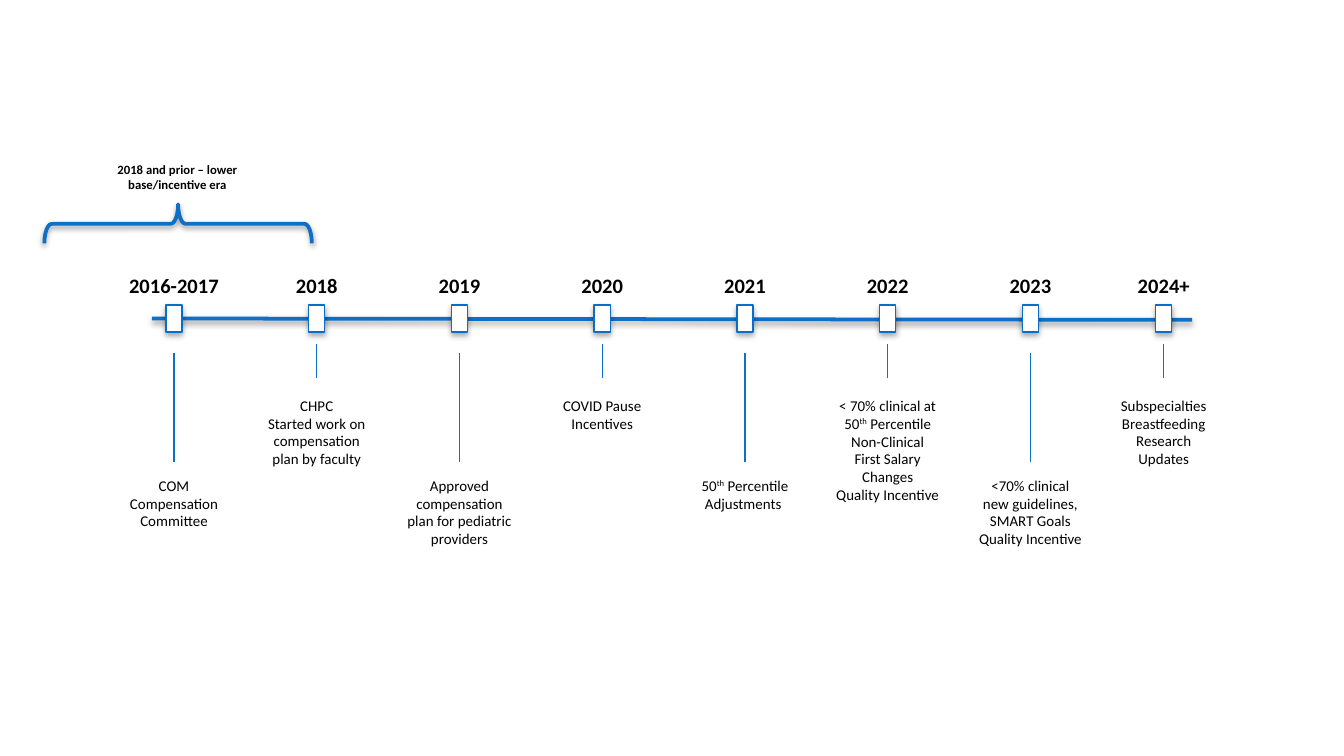
from typing import NamedTuple

from lxml.etree import SubElement
from pptx import Presentation
from pptx.dml.color import RGBColor
from pptx.enum.shapes import MSO_CONNECTOR, MSO_SHAPE
from pptx.enum.text import MSO_AUTO_SIZE, PP_ALIGN
from pptx.oxml.ns import qn
from pptx.util import Inches, Pt

COLORS = {"axis": "0F6FC6", "marker": "0A6DC6", "paper": "FFFFFF", "ink": "000000"}
FONT = "Calibri"
COLUMNS, ROWS = 100, 56.25
FIRST_CENTER, PITCH = 12.95, 10.62
SHORT, LONG = (25.6, 28.1, 29), (26.3, 34.4, 34.95)


class Milestone(NamedTuple):
    """One dated event with its stem rows and text height."""

    year: str
    paragraphs: tuple
    stem: tuple
    text_rows: float
    year_columns: float = 5.8
    shift: float = 0


MILESTONES = (
    Milestone("2016-2017", ("COM Compensation Committee",), LONG, 5, 10.7),
    Milestone("2018", ("CHPC", "Started work on compensation plan by faculty"), SHORT, 6.4),
    Milestone("2019", ("Approved compensation plan for pediatric providers",), LONG, 7.7),
    Milestone("2020", ("COVID Pause", "Incentives"), SHORT, 3.7),
    Milestone("2021", ("50^th^ Percentile Adjustments ",), LONG, 5),
    Milestone(
        "2022",
        ("< 70% clinical at 50^th^ Percentile Non-Clinical", "First Salary Changes", "Quality Incentive"),
        SHORT,
        9.1,
    ),
    Milestone(
        "2023",
        ("<70% clinical new guidelines, SMART Goals", "Quality Incentive"),
        LONG,
        6.4,
    ),
    Milestone(
        "2024+",
        ("Subspecialties", "Breastfeeding", "Research Updates"),
        SHORT,
        7.7,
        6.5,
        -0.7,
    ),
)


def grid(*cells):
    """Turn grid columns or rows into lengths."""
    return [Inches(cell / 10) for cell in cells]


def color(name):
    """Look up a named colour."""
    return RGBColor.from_string(COLORS[name])


def set_effects(item, shadow_opacity=0):
    """Give an item a soft shadow below it, or none."""
    effects = SubElement(item._element.spPr, qn("a:effectLst"))
    if shadow_opacity:
        shadow = SubElement(
            effects,
            qn("a:outerShdw"),
            blurRad=str(Pt(3.1)),
            dist=str(Pt(1.6)),
            dir="5400000",
            rotWithShape="0",
        )
        ink = SubElement(shadow, qn("a:srgbClr"), val=COLORS["ink"])
        SubElement(ink, qn("a:alpha"), val=str(shadow_opacity * 1000))


def add_text(page, area, paragraphs, size, bold=False):
    """Write centred paragraphs, raising the parts between carets."""
    box = page.shapes.add_textbox(*grid(*area))
    frame = box.text_frame
    frame.word_wrap = True
    frame.auto_size = MSO_AUTO_SIZE.SHAPE_TO_FIT_TEXT
    for index, text in enumerate(paragraphs):
        para = frame.add_paragraph() if index else frame.paragraphs[0]
        para.alignment = PP_ALIGN.CENTER
        for order, part in enumerate(text.split("^")):
            span = para.add_run()
            span.text = part
            span.font.name, span.font.size, span.font.bold = FONT, Pt(size), bold
            span.font.color.rgb = color("ink")
            if order % 2:
                span._r.get_or_add_rPr().set("baseline", "30000")


def add_line(page, ends, width, shadow_opacity=0):
    """Draw a straight line between two grid points."""
    line = page.shapes.add_connector(MSO_CONNECTOR.STRAIGHT, *grid(*ends))
    line.line.color.rgb = color("axis")
    line.line.width = Pt(width)
    set_effects(line, shadow_opacity)


def add_marker(page, area):
    """Place one white marker on the axis."""
    marker = page.shapes.add_shape(MSO_SHAPE.RECTANGLE, *grid(*area))
    marker.fill.solid()
    marker.fill.fore_color.rgb = color("paper")
    marker.line.color.rgb = color("marker")
    marker.line.width = Pt(0.75)
    set_effects(marker, 35)


def add_era(page, area, caption_area, caption):
    """Span an area with an upward brace below its caption."""
    left, top, width, height = area
    upright = (left + (width - height) / 2, top + (height - width) / 2, height, width)
    brace = page.shapes.add_shape(MSO_SHAPE.LEFT_BRACE, *grid(*upright))
    brace.rotation = 90
    brace.adjustments[0] = 0.19
    brace.fill.background()
    brace.line.color.rgb = color("axis")
    brace.line.width = Pt(2)
    set_effects(brace, 38)
    add_text(page, caption_area, (caption,), 6.8, bold=True)


def add_milestone(page, center, milestone):
    """Place marker, year, stem and description around a centre column."""
    stem_top, stem_bottom, text_top = milestone.stem
    add_marker(page, (center - 0.6, 22.7, 1.2, 2))
    year_left = center - milestone.year_columns / 2
    add_text(page, (year_left, 19.85, milestone.year_columns, 2.9), (milestone.year,), 11, bold=True)
    add_line(page, (center, stem_top, center, stem_bottom), 0.75)
    add_text(page, (center - 4.9, text_top, 9.8, milestone.text_rows), milestone.paragraphs, 8)


def add_timeline(page, area):
    """Draw the axis across an area and its milestones at equal steps."""
    left, top, width, height = area
    add_line(page, (left, top, left + width, top + height), 2, 38)
    for index, milestone in enumerate(MILESTONES):
        add_milestone(page, FIRST_CENTER + index * PITCH + milestone.shift, milestone)


def main():
    """Build the timeline slide and save it."""
    deck = Presentation()
    deck.slide_width, deck.slide_height = grid(COLUMNS, ROWS)
    page = deck.slides.add_slide(deck.slide_layouts[6])
    add_timeline(page, (11.3, 23.7, 77.4, 0.1))
    add_era(
        page,
        (3.3, 15.2, 19.9, 2.9),
        (7.7, 11.55, 11, 3.3),
        "2018 and prior – lower base/incentive era",
    )
    deck.save("out.pptx")


if __name__ == "__main__":
    main()
